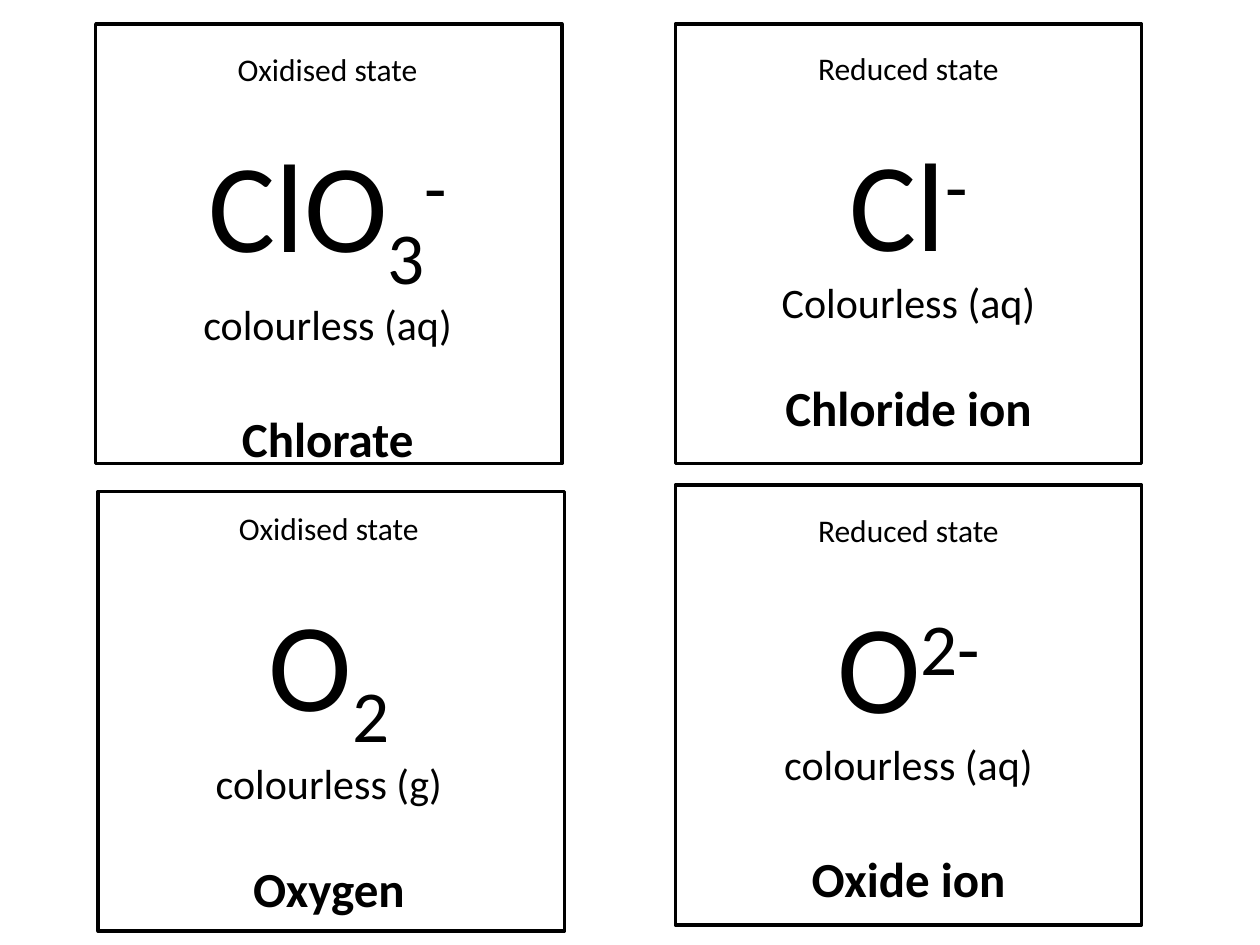
from dataclasses import dataclass

from pptx import Presentation
from pptx import util as u
from pptx.dml import color
from pptx.enum import shapes, text


@dataclass(frozen=True)
class Theme:
    ink: color.RGBColor = color.RGBColor(0, 0, 0)
    font: str = "Calibri"
    state: int = 18
    formula: int = 72
    appearance: int = 24
    name: int = 28
    border: int = 2
    formula_gap: int = 22


THEME = Theme()
SUB, SUPER = -25000, 30000
CARD_WIDTH, CARD_HEIGHT = 3.7, 3.49
LABEL_WIDTH = 4.02

CARDS = [
    (0.76, 0.19, 0.59, 0.35, 3.33, "Oxidised state",
     [("ClO", 0), ("3", SUB), ("-", SUPER)], "colourless (aq)", "Chlorate", 34),
    (5.36, 0.19, 5.2, 0.34, 3.2, "Reduced state",
     [("Cl", 0), ("-", SUPER)], "Colourless (aq)", "Chloride ion", 29),
    (0.78, 3.9, 0.6, 3.99, 3.2, "Oxidised state",
     [("O", 0), ("2", SUB)], "colourless (g)", "Oxygen", 29),
    (5.36, 3.85, 5.2, 4.01, 3.33, "Reduced state",
     [("O", 0), ("2-", SUPER)], "colourless (aq)", "Oxide ion", 34),
]


def add_border(slide, left, top):
    border = slide.shapes.add_shape(
        shapes.MSO_SHAPE.RECTANGLE, u.Inches(left), u.Inches(top),
        u.Inches(CARD_WIDTH), u.Inches(CARD_HEIGHT))
    border.shadow.inherit = False
    border.fill.background()
    border.line.color.rgb = THEME.ink
    border.line.width = u.Pt(THEME.border)


def add_label(slide, left, top, height, state, formula, appearance, name, name_gap):
    label = slide.shapes.add_textbox(
        u.Inches(left), u.Inches(top), u.Inches(LABEL_WIDTH), u.Inches(height))
    frame = label.text_frame
    frame.word_wrap = True
    frame.auto_size = text.MSO_AUTO_SIZE.SHAPE_TO_FIT_TEXT
    lines = [
        ([(state, 0)], THEME.state, 0, False),
        (formula, THEME.formula, THEME.formula_gap, False),
        ([(appearance, 0)], THEME.appearance, 0, False),
        ([(name, 0)], THEME.name, name_gap, True),
    ]
    for index, (parts, size, gap, bold) in enumerate(lines):
        line = frame.add_paragraph() if index else frame.paragraphs[0]
        line.alignment = text.PP_ALIGN.CENTER
        line.space_before = u.Pt(gap)
        line.font.name = THEME.font
        line.font.size = u.Pt(size)
        line.font.bold = bold
        line.font.color.rgb = THEME.ink
        for wording, baseline in parts:
            part = line.add_run()
            part.text = wording
            if baseline:
                part._r.get_or_add_rPr().set("baseline", str(baseline))


def add_card(slide, left, top, label_left, label_top, label_height, *content):
    add_border(slide, left, top)
    add_label(slide, label_left, label_top, label_height, *content)


def main():
    deck = Presentation()
    deck.slide_width, deck.slide_height = u.Inches(10), u.Inches(7.5)
    slide = deck.slides.add_slide(deck.slide_layouts[6])
    for card in CARDS:
        add_card(slide, *card)
    deck.save("out.pptx")


if __name__ == "__main__":
    main()
